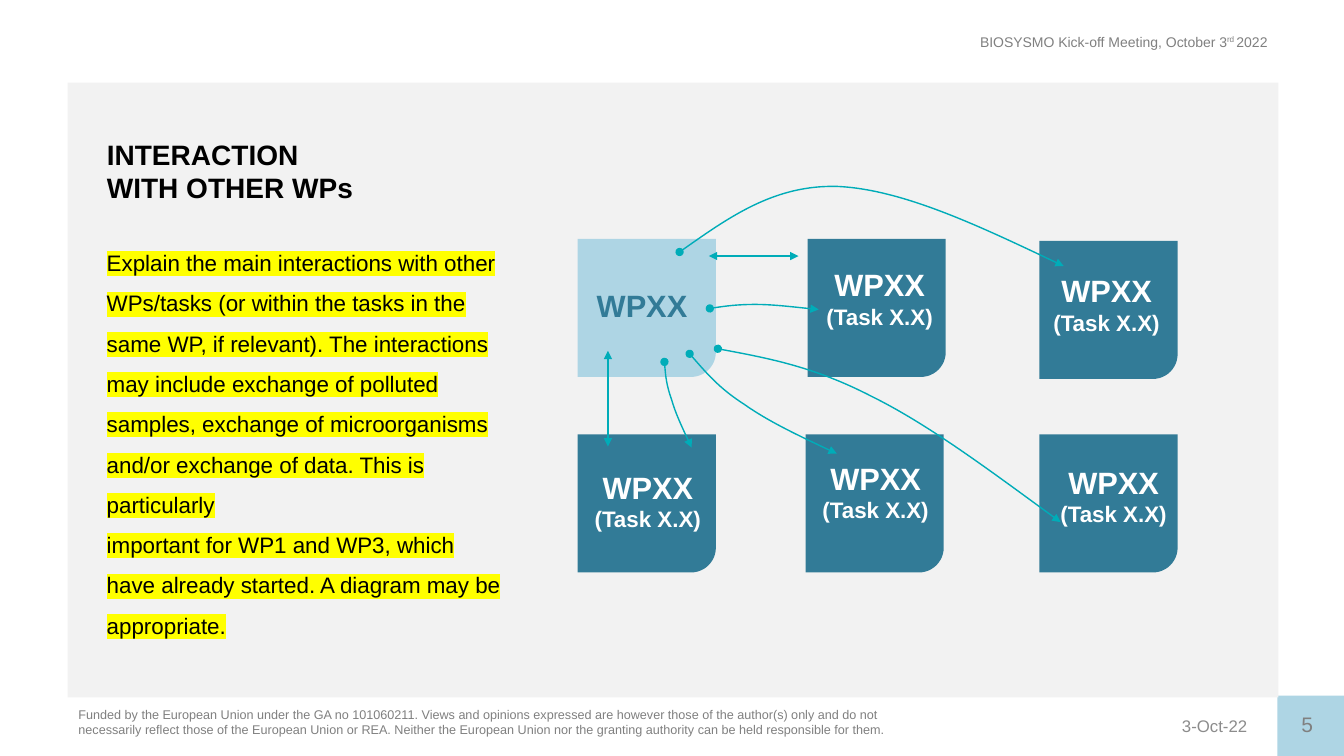
from typing import NamedTuple
from pptx import Presentation
from pptx.dml.color import RGBColor
from pptx.enum.shapes import MSO_CONNECTOR, MSO_SHAPE
from pptx.enum.text import MSO_ANCHOR, MSO_AUTO_SIZE, PP_ALIGN
from pptx.oxml.ns import qn
from pptx.util import Inches, Pt
from lxml import etree

RECT, CARD = MSO_SHAPE.RECTANGLE, MSO_SHAPE.ROUND_1_RECTANGLE
STRAIGHT = MSO_CONNECTOR.STRAIGHT
LEFT, MID, RIGHT = PP_ALIGN.LEFT, PP_ALIGN.CENTER, PP_ALIGN.RIGHT
TOP, CENTER = MSO_ANCHOR.TOP, MSO_ANCHOR.MIDDLE
FIXED = MSO_AUTO_SIZE.NONE
PALE, DARK, TEAL, GREY = "AED5E4", "327B97", "00ACB8", "808080"
WHITE, BLACK = "FFFFFF", "000000"
SIDE = 1.37


class Line(NamedTuple):
    text: str
    size: float
    color: str
    bold: bool = False
    align: PP_ALIGN = LEFT


class Box(NamedTuple):
    x: float
    y: float
    w: float
    h: float


class Card(NamedTuple):
    x: float
    y: float
    fill: str
    label: Box
    lines: list[Line]


TASK = [Line("WPXX", 22, WHITE, True, MID), Line("(Task X.X)", 16, WHITE, True, MID)]
CARDS = [
    Card(5.73, 2.37, PALE, Box(5.82, 2.8, 1.11, 0.47), [Line("WPXX", 22, DARK, True)]),
    Card(8.01, 2.37, DARK, Box(8.09, 2.59, 1.27, 0.74), TASK),
    Card(10.31, 2.39, DARK, Box(10.34, 2.65, 1.27, 0.74), TASK),
    Card(5.73, 4.31, DARK, Box(5.79, 4.6, 1.27, 0.74), TASK),
    Card(7.99, 4.31, DARK, Box(8.05, 4.51, 1.27, 0.74), TASK),
    Card(10.31, 4.31, DARK, Box(10.41, 4.55, 1.27, 0.74), TASK),
]
CURVES = [
    [(7.04, 3.06), (7.17, 3.04), (7.31, 3.02), (7.49, 3.02),
     (7.67, 3.02), (7.9, 3.05), (8.12, 3.07)],
    [(6.59, 3.59), (6.6, 3.71), (6.61, 3.82), (6.66, 3.96),
     (6.7, 4.1), (6.78, 4.27), (6.86, 4.44)],
    [(6.84, 3.51), (6.99, 3.68), (7.13, 3.85), (7.38, 4.01),
     (7.62, 4.18), (7.96, 4.34), (8.3, 4.5)],
    [(7.12, 3.46), (7.6, 3.55), (8.08, 3.64), (8.64, 3.93),
     (9.21, 4.21), (9.86, 4.7), (10.52, 5.18)],
    [(6.74, 2.5), (7.21, 2.17), (7.68, 1.83), (8.31, 1.85),
     (8.95, 1.88), (9.75, 2.26), (10.55, 2.64)],
]
ARROWS = [((7.03, 2.54), (7.92, 2.54)), ((6.03, 3.48), (6.03, 4.43))]


def paint(target, color: str) -> None:
    target.solid()
    target.fore_color.rgb = RGBColor.from_string(color)


def style(para, line: Line) -> None:
    para.alignment = line.align
    font = para.font
    font.name, font.size, font.bold = "Arial", Pt(line.size), line.bold
    paint(font.fill, line.color)


def place(shape, box: Box) -> None:
    shape.left, shape.top, shape.width, shape.height = map(Inches, box)


def write(shape, lines: list[Line], wrap: bool = True, anchor: MSO_ANCHOR = TOP) -> None:
    frame = shape.text_frame
    frame.auto_size, frame.word_wrap = FIXED, wrap
    frame.vertical_anchor = anchor
    frame.text = "\n".join(line.text for line in lines)
    for para, line in zip(frame.paragraphs, lines):
        style(para, line)


def add_text(shapes, box: Box, lines: list[Line], wrap: bool = True,
             anchor: MSO_ANCHOR = TOP):
    shape = shapes.add_textbox(*map(Inches, box))
    write(shape, lines, wrap, anchor)
    return shape


def add_block(shapes, kind: MSO_SHAPE, box: Box, color: str):
    shape = shapes.add_shape(kind, *map(Inches, box))
    shape.shadow.inherit = False
    shape.line.fill.background()
    paint(shape.fill, color)
    return shape


def add_tips(shape, head: str) -> None:
    shape.line.width = Pt(1)
    paint(shape.line.fill, TEAL)
    ln = shape._element.xpath(".//a:ln")[0]
    for tag, tip in (("a:headEnd", head), ("a:tailEnd", "triangle")):
        etree.SubElement(ln, qn(tag)).set("type", tip)


def add_curve(shapes, points: list[tuple[float, float]]) -> None:
    spots = [(Inches(x), Inches(y)) for x, y in points]
    form = shapes.build_freeform(*spots[0])
    form.add_line_segments(spots[1:], close=False)
    shape = form.convert_to_shape()
    shape.shadow.inherit = False
    shape.fill.background()
    steps = shape._element.xpath(".//a:lnTo")
    for i in range(0, len(steps), 3):
        bend = etree.Element(qn("a:cubicBezTo"))
        steps[i].addprevious(bend)
        for step in steps[i:i + 3]:
            bend.append(step[0])
            step.getparent().remove(step)
    add_tips(shape, "oval")


def add_arrow(shapes, start: tuple[float, float], end: tuple[float, float]) -> None:
    arrow = shapes.add_connector(STRAIGHT, *map(Inches, start + end))
    add_tips(arrow, "triangle")
    etree.SubElement(arrow._element.spPr, qn("a:effectLst"))


def add_frame(shapes) -> None:
    head = add_text(shapes, Box(8.24, 0.28, 4.43, 0.27), [
        Line("BIOSYSMO Kick-off Meeting, October 3", 10, GREY, align=RIGHT)])
    para = head.text_frame.paragraphs[0]
    for text, base in (("rd ", "30000"), ("2022", "0")):
        run = para.add_run()
        run.text = text
        run._r.get_or_add_rPr().set("baseline", base)
    add_text(shapes, Box(7.97, 7, 4.5, 0.4),
             [Line("3-Oct-22", 12, "8C8C8C", align=RIGHT)], anchor=CENTER)
    add_block(shapes, RECT, Box(12.67, 6.9, 0.67, 0.61), PALE)
    add_text(shapes, Box(0.68, 6.96, 8.45, 0.4), [Line(
        "Funded by the European Union under the GA no 101060211. Views and opinions "
        "expressed are however those of the author(s) only and do not necessarily "
        "reflect those of the European Union or REA. Neither the European Union nor "
        "the granting authority can be held responsible for them.", 9, GREY)])
    add_block(shapes, RECT, Box(0.67, 0.82, 12.01, 6.1), "F2F2F2")
    add_text(shapes, Box(12.81, 7.01, 0.46, 0.35), [Line("5", 15, GREY)], False)


def add_body(shapes) -> None:
    body = add_text(shapes, Box(0.96, 2.29, 4.12, 4.09), [Line(
        "Explain the main interactions with other WPs/tasks (or within the tasks in "
        "the same WP, if relevant). The interactions\v"
        "may include exchange of polluted samples, exchange of microorganisms "
        "and/or exchange of data. This is particularly\v"
        "important for WP1 and WP3, which have already started. A diagram may be "
        "appropriate.", 16, BLACK)])
    para = body.text_frame.paragraphs[0]
    para.line_spacing = 1.5
    for run in para.runs:
        mark = etree.SubElement(run._r.get_or_add_rPr(), qn("a:highlight"))
        etree.SubElement(mark, qn("a:srgbClr")).set("val", "FFFF00")


def main() -> None:
    deck = Presentation()
    deck.slide_width, deck.slide_height = Inches(13.33), Inches(7.5)
    slide = deck.slides.add_slide(deck.slide_layouts[5])
    shapes = slide.shapes
    add_frame(shapes)
    title = shapes.title
    place(title, Box(0.96, 1.31, 2.99, 0.77))
    write(title, [Line(text, 20, BLACK, True) for text in ("INTERACTION", "WITH OTHER WPs")])
    shapes._spTree.append(title._element)
    add_body(shapes)
    for card in CARDS:
        block = add_block(shapes, CARD, Box(card.x, card.y, SIDE, SIDE), card.fill)
        block.adjustments[0] = 0.18
        block.rotation = 90
    for points in CURVES:
        add_curve(shapes, points)
    for start, end in ARROWS:
        add_arrow(shapes, start, end)
    for card in CARDS:
        add_text(shapes, card.label, card.lines, False)
    deck.save("out.pptx")


if __name__ == "__main__":
    main()
